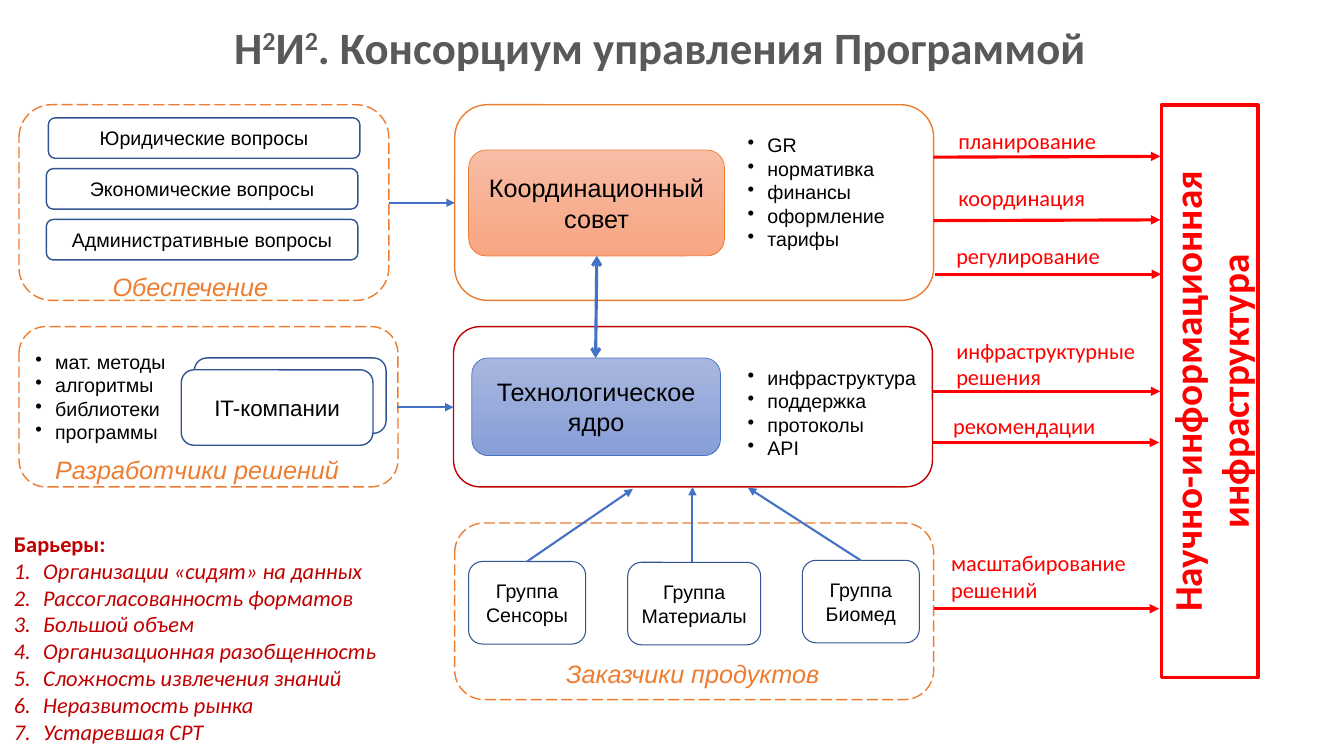
from dataclasses import dataclass

from lxml.etree import SubElement
from pptx import Presentation
from pptx.dml.color import RGBColor
from pptx.enum.dml import MSO_LINE
from pptx.enum.shapes import MSO_CONNECTOR, MSO_SHAPE
from pptx.enum.text import MSO_ANCHOR, PP_ALIGN
from pptx.oxml.ns import qn
from pptx.util import Cm, Pt


@dataclass(frozen=True)
class Theme:
    black: str = "000000"
    white: str = "FFFFFF"
    grey: str = "595959"
    orange: str = "ED7D31"
    blue: str = "4472C4"
    navy: str = "325491"
    dark_red: str = "C00000"
    red: str = "FF0000"
    council: tuple = ("F7BDA5", "F8A582")
    core: tuple = ("A8B7DF", "889ED7")
    title_size: int = 32
    infrastructure_size: int = 28
    heading_size: int = 18
    label_size: int = 16
    body_size: int = 14


theme = Theme()
presentation = Presentation()
presentation.slide_width, presentation.slide_height = Cm(33.87), Cm(19.05)
slide = presentation.slides.add_slide(presentation.slide_layouts[6])
shapes = slide.shapes


def add_box(place, line, width=1, fill=None, dashed=False, kind=MSO_SHAPE.ROUNDED_RECTANGLE):
    """Outlined shape; fill is None, one colour, or a pair for a vertical gradient."""
    shape = shapes.add_shape(kind, *map(Cm, place))
    shape.shadow.inherit = False
    shape.line.color.rgb = RGBColor.from_string(line)
    shape.line.width = Pt(width)
    if dashed:
        shape.line.dash_style = MSO_LINE.LONG_DASH
    if fill is None:
        shape.fill.background()
    elif isinstance(fill, tuple):
        shape.fill.gradient()
        shape.fill.gradient_angle = 270
        for stop, color in zip(shape.fill.gradient_stops, fill):
            stop.color.rgb = RGBColor.from_string(color)
    else:
        shape.fill.solid()
        shape.fill.fore_color.rgb = RGBColor.from_string(fill)
    frame = shape.text_frame
    frame.word_wrap = True
    frame.vertical_anchor = MSO_ANCHOR.MIDDLE
    frame.margin_left = frame.margin_right = 0
    return shape


def write(shape, lines, size, color=theme.black, name="Arial", align=PP_ALIGN.CENTER,
          bullet=None, indent=0.5, **style):
    """Put one paragraph per line; bullet is a (tag, attribute, value) triple."""
    frame = shape.text_frame
    for index, line in enumerate(lines):
        paragraph = frame.add_paragraph() if index else frame.paragraphs[0]
        paragraph.text = line
        paragraph.alignment = align
        for run in paragraph.runs:
            for key, value in {"size": Pt(size), "name": name, **style}.items():
                setattr(run.font, key, value)
            run.font.color.rgb = RGBColor.from_string(color)
        if bullet:
            tag, attribute, value = bullet
            properties = paragraph._p.get_or_add_pPr()
            properties.set("marL", str(Cm(indent)))
            properties.set("indent", str(-Cm(indent)))
            SubElement(properties, qn(tag)).set(attribute, value)


# Frames and their captions
for place, line, dashed in [
    ((0.48, 2.64, 9.32, 4.93), theme.orange, True),
    ((0.48, 8.23, 9.55, 4.04), theme.orange, True),
    ((11.46, 2.64, 12.07, 4.93), theme.orange, False),
    ((11.43, 8.23, 12.07, 4.04), theme.dark_red, False),
    ((11.46, 13.18, 12.07, 4.45), theme.orange, True),
]:
    add_box(place, line, dashed=dashed)

for caption, place in [
    ("Обеспечение", (2.59, 6.71, 4.88, 1.02)),
    ("Разработчики решений", (1.14, 11.33, 7.75, 1.02)),
    ("Заказчики продуктов", (14.02, 16.46, 6.96, 1.02)),
]:
    box = shapes.add_textbox(*map(Cm, place))
    write(box, [caption], theme.heading_size, theme.orange, align=PP_ALIGN.LEFT, italic=True)

# Boxes inside the frames
for row, (topic, left) in enumerate([("Юридические", 1.22), ("Экономические", 1.17),
                                     ("Административные", 1.17)]):
    box = add_box((left, 2.97 + 1.28 * row, 7.85, 1.02), theme.navy)
    write(box, [f"{topic} вопросы"], theme.body_size)

for group, place in [
    ("Сенсоры", (11.81, 14.15, 2.95, 2.08)),
    ("Материалы", (15.82, 14.17, 3.35, 2.08)),
    ("Биомед", (20.22, 14.12, 2.95, 2.08)),
]:
    write(add_box(place, theme.navy, 0.75), ["Группа", group], theme.body_size)

add_box((4.9, 9.02, 4.83, 1.9), theme.navy, fill=theme.white)
companies = add_box((4.57, 9.32, 4.83, 1.9), theme.navy, fill=theme.white)
write(companies, ["IT-компании"], theme.label_size)

council = add_box((11.81, 3.78, 6.45, 2.67), theme.orange, 0.5, theme.council)
write(council, ["Координационный совет"], theme.heading_size)
core = add_box((11.89, 9.02, 6.27, 2.46), theme.blue, 0.5, theme.core)
write(core, ["Технологическое", "ядро"], theme.heading_size)

infrastructure = add_box((23.27, 8.64, 14.43, 2.44), theme.red, 2.25, theme.white,
                         kind=MSO_SHAPE.RECTANGLE)
infrastructure.rotation = 270
write(infrastructure, ["Научно-информационная инфраструктура"], theme.infrastructure_size,
      theme.red, "Calibri", bold=True)

# Bulleted lists
for items, place in [
    (["GR", "нормативка", "финансы", "оформление", "тарифы"], (18.59, 3.23, 4.29, 3.25)),
    (["инфраструктура", "поддержка", "протоколы", "API"], (18.59, 9.09, 4.95, 2.64)),
    (["мат. методы", "алгоритмы", "библиотеки", "программы"], (0.64, 8.69, 3.94, 2.64)),
]:
    box = shapes.add_textbox(*map(Cm, place))
    box.text_frame.word_wrap = True
    write(box, items, theme.body_size, align=PP_ALIGN.LEFT, bullet=("a:buChar", "char", "•"))

# Barriers
barriers = shapes.add_textbox(Cm(0.1), Cm(13.23), Cm(10.06), Cm(5.8))
barriers.text_frame.word_wrap = True
write(barriers, [
    "Барьеры:",
    "Организации «сидят» на данных",
    "Рассогласованность форматов",
    "Большой объем",
    "Организационная разобщенность",
    "Сложность извлечения знаний",
    "Неразвитость рынка",
    "Устаревшая СРТ",
], theme.label_size, theme.dark_red, "Calibri", PP_ALIGN.LEFT,
    ("a:buAutoNum", "type", "arabicPeriod"), 0.74, italic=True)
heading = barriers.text_frame.paragraphs[0]
heading.runs[0].font.bold, heading.runs[0].font.italic = True, False
heading_properties = heading._p.pPr
heading_properties.remove(heading_properties.find(qn("a:buAutoNum")))
for attribute in ("marL", "indent"):
    heading_properties.set(attribute, "0")

# Labels of the outputs
for label, place in [
    ("планирование", (23.9, 3.07, 4.01, 0.94)),
    ("координация", (23.9, 4.52, 3.73, 0.94)),
    ("регулирование", (23.85, 5.97, 4.17, 0.94)),
    ("инфраструктурные \vрешения", (23.85, 8.36, 5.21, 1.63)),
    ("рекомендации", (23.77, 10.26, 4.14, 0.94)),
    ("масштабирование \vрешений", (23.72, 13.72, 5.11, 1.63)),
]:
    box = shapes.add_textbox(*map(Cm, place))
    write(box, [label], theme.label_size, theme.red, "Calibri", PP_ALIGN.LEFT)

# Arrows
inputs = [
    (9.8, 5.11, 11.46, 5.11),
    (10.01, 10.26, 11.43, 10.26),
    (13.28, 14.15, 15.95, 12.32),
    (17.45, 14.15, 17.45, 12.27),
    (21.69, 14.12, 18.85, 12.29),
]
outputs = [
    (23.52, 3.96, 29.24, 3.94),
    (23.52, 5.56, 29.24, 5.54),
    (23.57, 6.91, 29.26, 6.91),
    (23.5, 9.86, 29.24, 9.86),
    (23.5, 11.15, 29.21, 11.15),
    (23.55, 15.34, 29.21, 15.34),
]
exchange = [(15.01, 9.02, 15.04, 6.45)]
for routes, color, width, ends in [
    (inputs, theme.blue, 1.5, {"a:tailEnd": "triangle"}),
    (outputs, theme.red, 2.25, {"a:tailEnd": "triangle"}),
    (exchange, theme.blue, 2.25, {"a:headEnd": "arrow", "a:tailEnd": "arrow"}),
]:
    for route in routes:
        arrow = shapes.add_connector(MSO_CONNECTOR.STRAIGHT, *map(Cm, route))
        arrow.line.color.rgb = RGBColor.from_string(color)
        arrow.line.width = Pt(width)
        for tag, kind in ends.items():
            SubElement(arrow.line._get_or_add_ln(), qn(tag)).set("type", kind)
        SubElement(arrow._element.spPr, qn("a:effectLst"))

# Title
title = shapes.add_textbox(Cm(3.51), Cm(0.36), Cm(26.26), Cm(1.63))
title.text_frame.word_wrap = True
paragraph = title.text_frame.paragraphs[0]
paragraph.alignment = PP_ALIGN.CENTER
for text in ["Н", "2", "И", "2", ". Консорциум управления Программой"]:
    run = paragraph.add_run()
    run.text = text
    for key, value in {"size": Pt(theme.title_size), "name": "Calibri", "bold": True}.items():
        setattr(run.font, key, value)
    run.font.color.rgb = RGBColor.from_string(theme.grey)
    if text == "2":
        run._r.get_or_add_rPr().set("baseline", "30000")

presentation.save("out.pptx")
